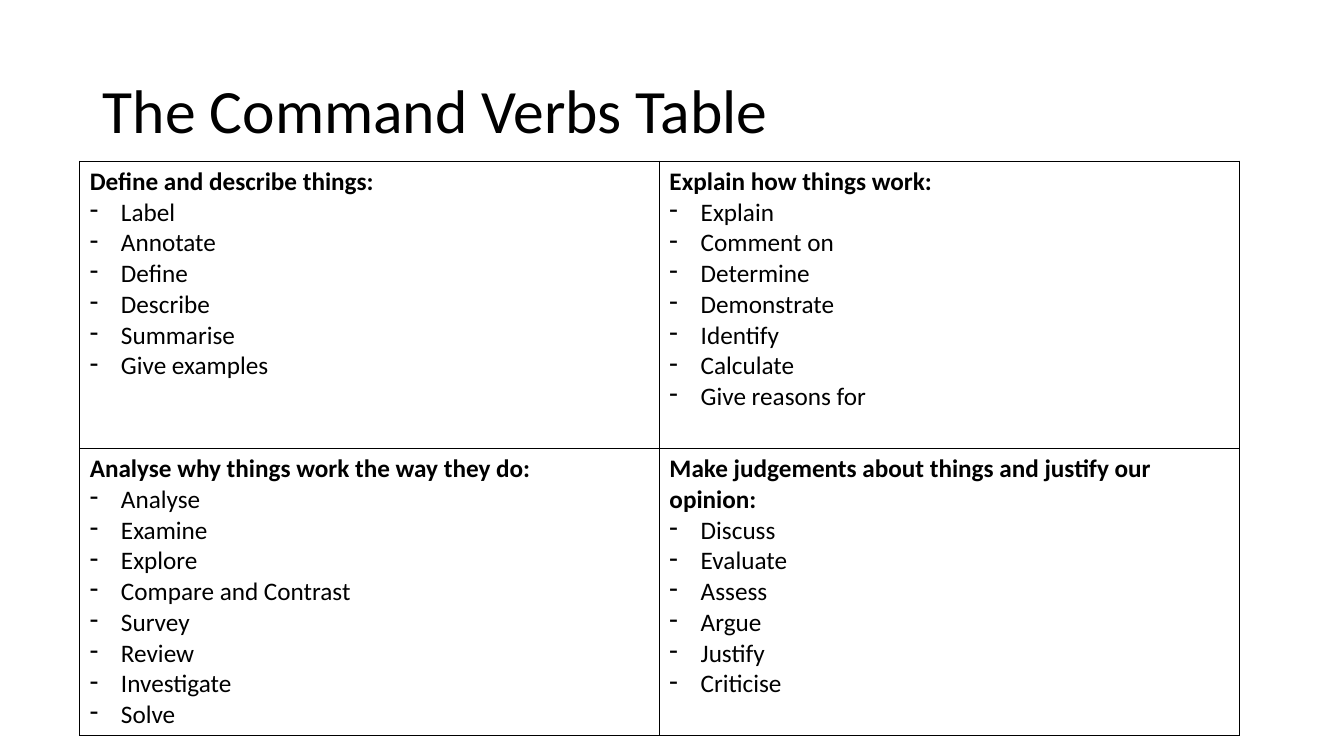
from lxml.etree import SubElement
from pptx import Presentation
from pptx.dml.color import RGBColor
from pptx.enum.text import MSO_ANCHOR, PP_ALIGN
from pptx.oxml.ns import qn
from pptx.util import Inches, Pt

COLOURS = {"ink": "000000", "paper": "FFFFFF"}
FONT = "Calibri"
VERB_GROUPS = [
    [
        ("Define and describe things:",
         ["Label", "Annotate", "Define", "Describe", "Summarise", "Give examples"]),
        ("Explain how things work:",
         ["Explain", "Comment on", "Determine", "Demonstrate", "Identify",
          "Calculate", "Give reasons for"]),
    ],
    [
        ("Analyse why things work the way they do:",
         ["Analyse", "Examine", "Explore", "Compare and Contrast", "Survey",
          "Review", "Investigate", "Solve"]),
        ("Make judgements about things and justify our opinion:",
         ["Discuss", "Evaluate", "Assess", "Argue", "Justify", "Criticise"]),
    ],
]


def write_line(paragraph, text, size, bold=False):
    paragraph.text = text
    paragraph.alignment = PP_ALIGN.LEFT
    font = paragraph.runs[0].font
    font.name = FONT
    font.size = Pt(size)
    font.bold = bold
    font.color.rgb = RGBColor.from_string(COLOURS["ink"])


def add_dash(paragraph):
    properties = paragraph._p.get_or_add_pPr()
    indent = Inches(0.31)
    properties.set("marL", str(indent))
    properties.set("indent", str(-indent))
    SubElement(properties, qn("a:buFontTx"))
    SubElement(properties, qn("a:buChar"), char="-")


def outline_cell(cell):
    properties = cell._tc.get_or_add_tcPr()
    for side in ("L", "R", "T", "B"):
        border = SubElement(properties, qn(f"a:ln{side}"), w=str(Pt(1)))
        colour = SubElement(border, qn("a:solidFill"))
        SubElement(colour, qn("a:srgbClr"), val=COLOURS["ink"])


def fill_cell(cell, heading, verbs):
    outline_cell(cell)
    cell.fill.solid()
    cell.fill.fore_color.rgb = RGBColor.from_string(COLOURS["paper"])
    cell.vertical_anchor = MSO_ANCHOR.TOP
    write_line(cell.text_frame.paragraphs[0], heading, 18, bold=True)
    for verb in verbs:
        verb_line = cell.text_frame.add_paragraph()
        write_line(verb_line, verb, 18)
        add_dash(verb_line)


def place_title(slide, text):
    title = slide.shapes.title
    title.left, title.top = Inches(0.92), Inches(0.4)
    title.width, title.height = Inches(11.5), Inches(1.45)
    title.text_frame.vertical_anchor = MSO_ANCHOR.MIDDLE
    heading = title.text_frame.paragraphs[0]
    write_line(heading, text, 44)
    heading.line_spacing = 0.9


def add_verb_table(slide):
    verb_table = slide.shapes.add_table(
        len(VERB_GROUPS), len(VERB_GROUPS[0]),
        Inches(0.79), Inches(1.6), Inches(11.5), Inches(5.7)).table
    verb_table.first_row = False
    verb_table.horz_banding = False
    for row, groups in enumerate(VERB_GROUPS):
        for column, (heading, verbs) in enumerate(groups):
            fill_cell(verb_table.cell(row, column), heading, verbs)


def main():
    presentation = Presentation()
    presentation.slide_width = Inches(13.33)
    presentation.slide_height = Inches(7.5)
    slide = presentation.slides.add_slide(presentation.slide_layouts[5])
    place_title(slide, "The Command Verbs Table")
    add_verb_table(slide)
    presentation.save("out.pptx")


if __name__ == "__main__":
    main()
